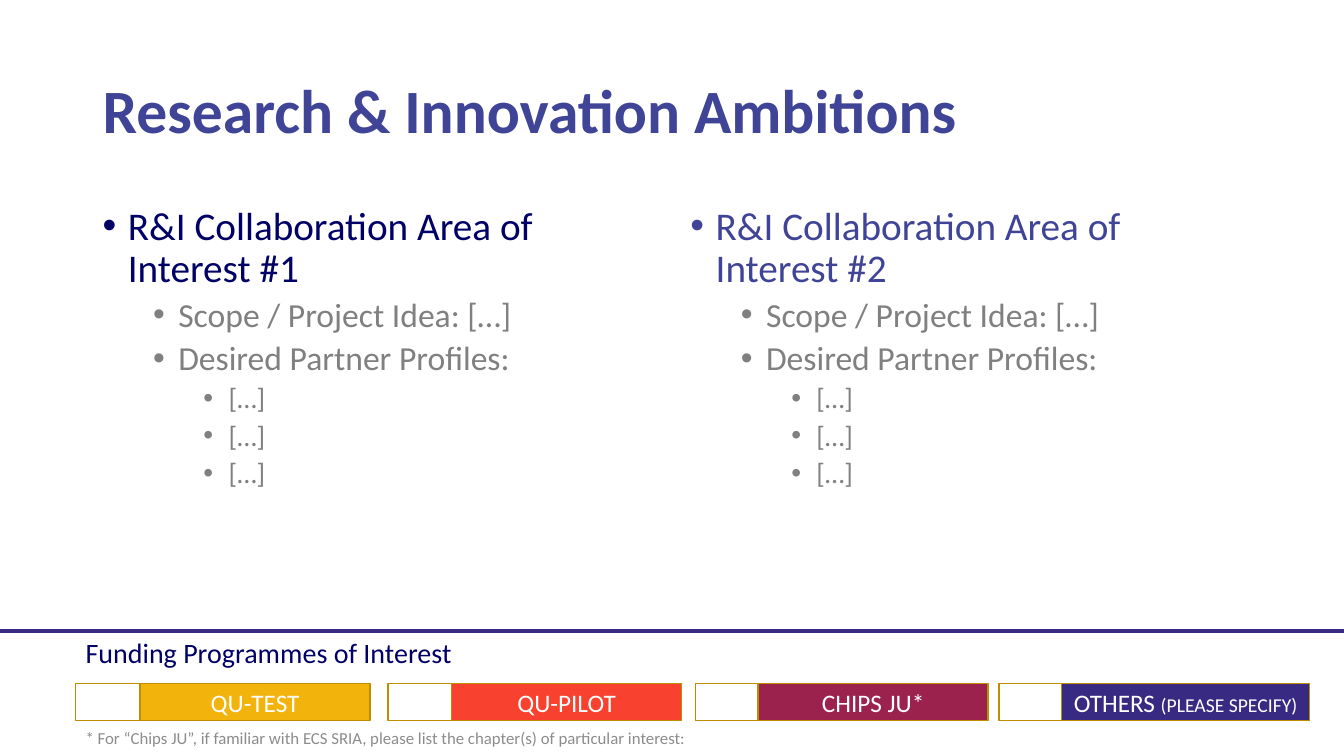
from lxml import etree
from pptx import Presentation
from pptx.dml.color import RGBColor
from pptx.enum.shapes import MSO_CONNECTOR, MSO_SHAPE
from pptx.enum.text import MSO_ANCHOR, PP_ALIGN
from pptx.oxml.ns import qn
from pptx.util import Inches, Pt

RECT = MSO_SHAPE.RECTANGLE
STRAIGHT = MSO_CONNECTOR.STRAIGHT
MIDDLE, TOP = MSO_ANCHOR.MIDDLE, MSO_ANCHOR.TOP
CENTER = PP_ALIGN.CENTER
FONT = "Calibri"
COLORS = {
    "indigo": "404496", "navy": "000066", "gray": "808080", "note": "8C8C8C",
    "white": "FFFFFF", "gold": "BD8E00", "amber": "F2B30C", "red": "F8412E",
    "plum": "9C224E", "violet": "382A82",
}


def style(r, size, color, bold=False):
    r.font.name = FONT
    r.font.size = Pt(size)
    r.font.bold = bold
    r.font.color.rgb = RGBColor.from_string(COLORS[color])


def add_text(left, top, width, height, text, size, color, anchor, bold=False):
    tf = s.shapes.add_textbox(Inches(left), Inches(top), Inches(width), Inches(height)).text_frame
    tf.word_wrap = True
    tf.vertical_anchor = anchor
    p = tf.paragraphs[0]
    p.text = text
    style(p.runs[0], size, color, bold)
    return tf


prs = Presentation()
prs.slide_width, prs.slide_height = Inches(13.33), Inches(7.5)
s = prs.slides.add_slide(prs.slide_layouts[6])

title = add_text(0.92, 0.4, 11.5, 1.45, "Research & Innovation Ambitions", 44, "indigo", MIDDLE, True)
title.paragraphs[0].line_spacing = 0.9

details = [
    (1, "Scope / Project Idea: […]", 24),
    (1, "Desired Partner Profiles:", 24),
] + [(2, "[…]", 20)] * 3

for number, left, color in [(1, 0.92, "navy"), (2, 6.75, "indigo")]:
    tf = add_text(left, 2, 5.67, 4.76, f"R&I Collaboration Area of Interest #{number}", 28, color, TOP)
    for level, text, size in details:
        p = tf.add_paragraph()
        p.text = text
        p.level = level
        p.space_before = Pt(5)
        style(p.runs[0], size, "gray")
    for p in tf.paragraphs:
        p.line_spacing = 0.9
        pPr = p._p.get_or_add_pPr()
        pPr.set("marL", str(Inches(0.25 + 0.5 * p.level)))
        pPr.set("indent", str(Inches(-0.25)))
        etree.SubElement(pPr, qn("a:buFont")).set("typeface", "Arial")
        etree.SubElement(pPr, qn("a:buChar")).set("char", "•")

programmes = [
    (0.75, 1.39, 2.28, "amber", [("QU-TEST", 18)]),
    (3.85, 4.48, 2.28, "red", [("QU-PILOT", 18)]),
    (6.9, 7.52, 2.28, "plum", [("CHIPS JU*", 18)]),
    (9.91, 10.53, 2.46, "violet", [("OTHERS ", 18), ("(PLEASE SPECIFY)", 14)]),
]
for box_left, label_left, label_width, color, runs in programmes:
    for left, width, fill in [(label_left, label_width, color), (box_left, label_left - box_left, None)]:
        sp = s.shapes.add_shape(RECT, Inches(left), Inches(6.78), Inches(width), Inches(0.37))
        sp.shadow.inherit = False
        sp.line.color.rgb = RGBColor.from_string(COLORS["gold"])
        sp.line.width = Pt(1)
        if fill is None:
            sp.fill.background()
            continue
        sp.fill.solid()
        sp.fill.fore_color.rgb = RGBColor.from_string(COLORS[fill])
        sp.text_frame.vertical_anchor = MIDDLE
        p = sp.text_frame.paragraphs[0]
        p.alignment = CENTER
        for text, size in runs:
            r = p.add_run()
            r.text = text
            style(r, size, "white")

add_text(0.75, 7.13, 12.06, 0.37,
         "* For “Chips JU”, if familiar with ECS SRIA, please list the chapter(s) of particular interest:",
         12, "note", MIDDLE)

divider = s.shapes.add_connector(STRAIGHT, 0, Inches(6.26), prs.slide_width, Inches(6.26))
divider.line.color.rgb = RGBColor.from_string(COLORS["violet"])
divider.line.width = Pt(3)
etree.SubElement(divider._element.spPr, qn("a:effectLst"))

add_text(0.75, 6.26, 4.69, 0.44, "Funding Programmes of Interest", 20, "navy", TOP)

prs.save("out.pptx")
